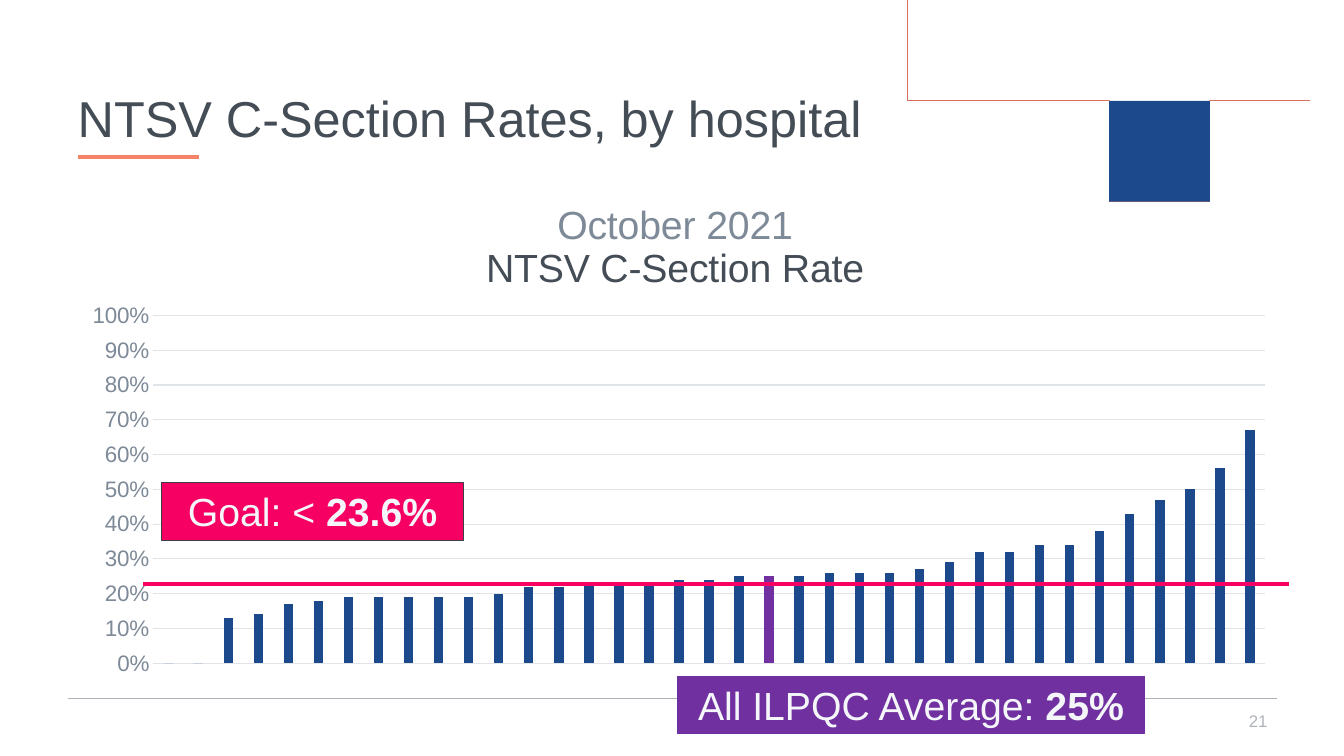
from dataclasses import dataclass

import pptx
import pptx.chart.data
import pptx.dml.color
import pptx.enum.chart
import pptx.enum.shapes
import pptx.enum.text
import pptx.oxml
import pptx.util
from pptx.util import Inches

RGBColor = pptx.dml.color.RGBColor
PP_ALIGN = pptx.enum.text.PP_ALIGN
MSO_ANCHOR = pptx.enum.text.MSO_ANCHOR

NAVY = RGBColor(0x1C, 0x49, 0x8B)
ORANGE = RGBColor(0xF0, 0x41, 0x15)
CORAL = RGBColor(0xF5, 0x83, 0x66)
PINK = RGBColor(0xF6, 0x00, 0x64)
PURPLE = RGBColor(0x70, 0x30, 0xA0)
DARK = RGBColor(0x44, 0x4C, 0x55)
SLATE = RGBColor(0x7E, 0x8A, 0x98)
SILVER = RGBColor(0xAF, 0xB3, 0xB9)
GRID = RGBColor(0xE1, 0xE4, 0xE7)
EDGE = RGBColor(0x3C, 0x40, 0x45)
PALE = RGBColor(0xF4, 0xF6, 0xFA)
FONT = "Arial"
Point = tuple[float, float]


@dataclass
class Rule:
    x1: float
    x2: float
    y: float
    color: RGBColor
    width: float


@dataclass
class Callout:
    x: float
    y: float
    w: float
    label: str
    value: str
    fill: RGBColor
    edge: RGBColor


@dataclass
class Ribbon:
    upper: list[Point]
    lower: list[Point]
    colors: list[RGBColor]


RIBBONS = [
    Ribbon(
        [(8.05, 0), (8.82, 0.54), (9.58, 0.99), (10.39, 1.33), (10.81, 1.44), (11.25, 1.5),
         (11.68, 1.52), (12.12, 1.49), (12.56, 1.43), (12.93, 1.33), (13.33, 1.2)],
        [(13.33, 1.21), (12.94, 1.35), (12.56, 1.45), (12.13, 1.52), (11.69, 1.56), (11.24, 1.55),
         (10.8, 1.49), (10.37, 1.39), (9.55, 1.06), (8.78, 0.62), (8.04, 0.12), (7.86, 0)],
        [ORANGE, CORAL]),
    Ribbon(
        [(8.27, 0), (8.79, 0.38), (9.54, 0.86), (10.34, 1.23), (11.2, 1.44), (12.09, 1.45),
         (12.53, 1.4), (12.97, 1.3), (13.33, 1.19)],
        [(13.33, 1.2), (12.97, 1.32), (12.53, 1.43), (12.09, 1.49), (11.64, 1.52), (11.19, 1.5),
         (10.31, 1.31), (9.48, 0.96), (8.71, 0.49), (8.34, 0.23), (8.02, 0)],
        [NAVY]),
]
RULES = [Rule(0.67, 12.67, 6.93, SILVER, 0.5), Rule(0.77, 1.97, 1.56, CORAL, 2.5)]
GOAL_RULE = Rule(12.78, 1.42, 5.79, PINK, 3)
CALLOUTS = [
    Callout(1.6, 4.79, 3, "Goal: < ", "23.6%", PINK, EDGE),
    Callout(6.72, 6.71, 4.63, "All ILPQC Average: ", "25%", PURPLE, PURPLE),
]
RATES = [0, 0, 0.13, 0.14, 0.17, 0.18, 0.19, 0.19, 0.19, 0.19, 0.19, 0.2, 0.22, 0.22, 0.23,
         0.23, 0.23, 0.24, 0.24, 0.25, 0.25, 0.25, 0.26, 0.26, 0.26, 0.27, 0.29, 0.32, 0.32,
         0.34, 0.34, 0.38, 0.43, 0.47, 0.5, 0.56, 0.67]
AVERAGE_INDEX = 20


def smooth(knots: list[Point], steps: int = 8) -> list[Point]:
    padded = [knots[0], *knots, knots[-1]]
    points = []
    for a, b, c, d in zip(padded, padded[1:], padded[2:], padded[3:]):
        for t in (i / steps for i in range(steps)):
            points.append(tuple(
                q + t * (r - p) / 2 + t * t * (2 * p - 5 * q + 4 * r - s) / 2
                + t ** 3 * (3 * q - p - 3 * r + s) / 2
                for p, q, r, s in zip(a, b, c, d)))
    return points + [knots[-1]]


def add_run(p, text: str, size: float, color: RGBColor, bold: bool = False) -> None:
    r = p.add_run()
    r.text = text
    r.font.name = FONT
    r.font.size = pptx.util.Pt(size)
    r.font.bold = bold
    r.font.color.rgb = color


def add_ribbon(s, ribbon: Ribbon) -> None:
    points = smooth(ribbon.upper) + smooth(ribbon.lower)
    fb = s.shapes.build_freeform(*points[0], scale=Inches(1))
    fb.add_line_segments(points[1:], close=True)
    sp = fb.convert_to_shape()
    sp.shadow.inherit = False
    sp.line.fill.background()
    if len(ribbon.colors) == 1:
        sp.fill.solid()
        sp.fill.fore_color.rgb = ribbon.colors[0]
        return
    sp.fill.gradient()
    sp.fill.gradient_angle = 0
    for stop, color, position in zip(sp.fill.gradient_stops, ribbon.colors, (0, 0.2)):
        stop.color.rgb = color
        stop.position = position


def add_rule(s, rule: Rule) -> None:
    line = s.shapes.add_connector(
        pptx.enum.shapes.MSO_CONNECTOR.STRAIGHT,
        Inches(rule.x1), Inches(rule.y), Inches(rule.x2), Inches(rule.y))
    line.line.color.rgb = rule.color
    line.line.width = pptx.util.Pt(rule.width)
    line._element.spPr.append(pptx.oxml.parse_xml(
        '<a:effectLst xmlns:a="http://schemas.openxmlformats.org/drawingml/2006/main"/>'))


def add_callout(s, c: Callout) -> None:
    sp = s.shapes.add_shape(pptx.enum.shapes.MSO_SHAPE.RECTANGLE,
                            Inches(c.x), Inches(c.y), Inches(c.w), Inches(0.57))
    sp.shadow.inherit = False
    sp.fill.solid()
    sp.fill.fore_color.rgb = c.fill
    sp.line.color.rgb = c.edge
    sp.line.width = pptx.util.Pt(0.75)
    tf = sp.text_frame
    tf.word_wrap = True
    tf.auto_size = pptx.enum.text.MSO_AUTO_SIZE.SHAPE_TO_FIT_TEXT
    tf.vertical_anchor = MSO_ANCHOR.TOP
    p = tf.paragraphs[0]
    p.alignment = PP_ALIGN.CENTER
    add_run(p, c.label, 28, PALE)
    add_run(p, c.value, 28, PALE, True)


def set_layout(element, **fractions: float) -> None:
    for old in element.findall(pptx.oxml.ns.qn("c:layout")):
        element.remove(old)
    target = '<c:layoutTarget val="inner"/>' if "w" in fractions else ""
    modes = "".join(f'<c:{k}Mode val="edge"/>' for k in "xy")
    sizes = "".join(f'<c:{k} val="{v}"/>' for k, v in fractions.items())
    layout = pptx.oxml.parse_xml(
        '<c:layout xmlns:c="http://schemas.openxmlformats.org/drawingml/2006/chart">'
        f"<c:manualLayout>{target}{modes}{sizes}</c:manualLayout></c:layout>")
    tx = element.find(pptx.oxml.ns.qn("c:tx"))
    element.insert(0 if tx is None else 1, layout)


def add_rate_chart(s) -> None:
    data = pptx.chart.data.CategoryChartData(number_format="0%")
    data.categories = [str(i + 1) for i in range(len(RATES))]
    data.add_series("Series 1", RATES)
    chart = s.shapes.add_chart(pptx.enum.chart.XL_CHART_TYPE.COLUMN_CLUSTERED,
                               Inches(0.67), Inches(1.78), Inches(12.12), Inches(5), data).chart
    chart.has_legend = False
    chart.font.name = FONT
    chart.font.size = pptx.util.Pt(10)
    chart.font.color.rgb = DARK
    chart.has_title = True
    tf = chart.chart_title.text_frame
    add_run(tf.paragraphs[0], "October 2021", 28, SLATE)
    add_run(tf.add_paragraph(), "NTSV C-Section Rate", 28, DARK)
    chart.chart_title.include_in_layout = False
    set_layout(chart.chart_title._element, x=0.34, y=0.04)
    set_layout(chart._chartSpace.chart.plotArea, x=0.07, y=0.27, w=0.91, h=0.69)

    chart.category_axis.visible = False
    axis = chart.value_axis
    axis.minimum_scale, axis.maximum_scale, axis.major_unit = 0, 1, 0.1
    axis.major_tick_mark = axis.minor_tick_mark = pptx.enum.chart.XL_TICK_MARK.NONE
    axis.format.line.fill.background()
    axis.major_gridlines.format.line.color.rgb = GRID
    axis.major_gridlines.format.line.width = pptx.util.Pt(0.75)
    labels = axis.tick_labels
    labels.number_format, labels.number_format_is_linked = "0%", False
    labels.font.name = FONT
    labels.font.size = pptx.util.Pt(16)
    labels.font.color.rgb = SLATE

    plot = chart.plots[0]
    plot.gap_width, plot.overlap, plot.vary_by_categories = 219, -27, False
    series = plot.series[0]
    for bar, color in ((series, NAVY), (series.points[AVERAGE_INDEX], PURPLE)):
        bar.format.fill.solid()
        bar.format.fill.fore_color.rgb = color


def main() -> None:
    prs = pptx.Presentation()
    prs.slide_width, prs.slide_height = Inches(13.33), Inches(7.5)
    s = prs.slides.add_slide(prs.slide_layouts[5])
    for ribbon in RIBBONS:
        add_ribbon(s, ribbon)
    for rule in RULES:
        add_rule(s, rule)
    add_rate_chart(s)

    title = s.shapes.title
    number = s.shapes.add_textbox(Inches(9.67), Inches(6.95), Inches(3), Inches(0.4))
    title.left, title.top, title.width, title.height = map(Inches, (0.67, 0.48, 12, 1.45))
    for sp, text, size, color, align in (
            (title, "NTSV C-Section Rates, by hospital", 36, DARK, PP_ALIGN.LEFT),
            (number, "21", 12, SILVER, PP_ALIGN.RIGHT)):
        tf = sp.text_frame
        tf.word_wrap = True
        tf.auto_size = pptx.enum.text.MSO_AUTO_SIZE.NONE
        tf.vertical_anchor = MSO_ANCHOR.MIDDLE
        tf.paragraphs[0].alignment = align
        add_run(tf.paragraphs[0], text, size, color)
    title.text_frame.paragraphs[0].line_spacing = 0.9

    add_rule(s, GOAL_RULE)
    for callout in CALLOUTS:
        add_callout(s, callout)
    prs.save("out.pptx")


if __name__ == "__main__":
    main()
